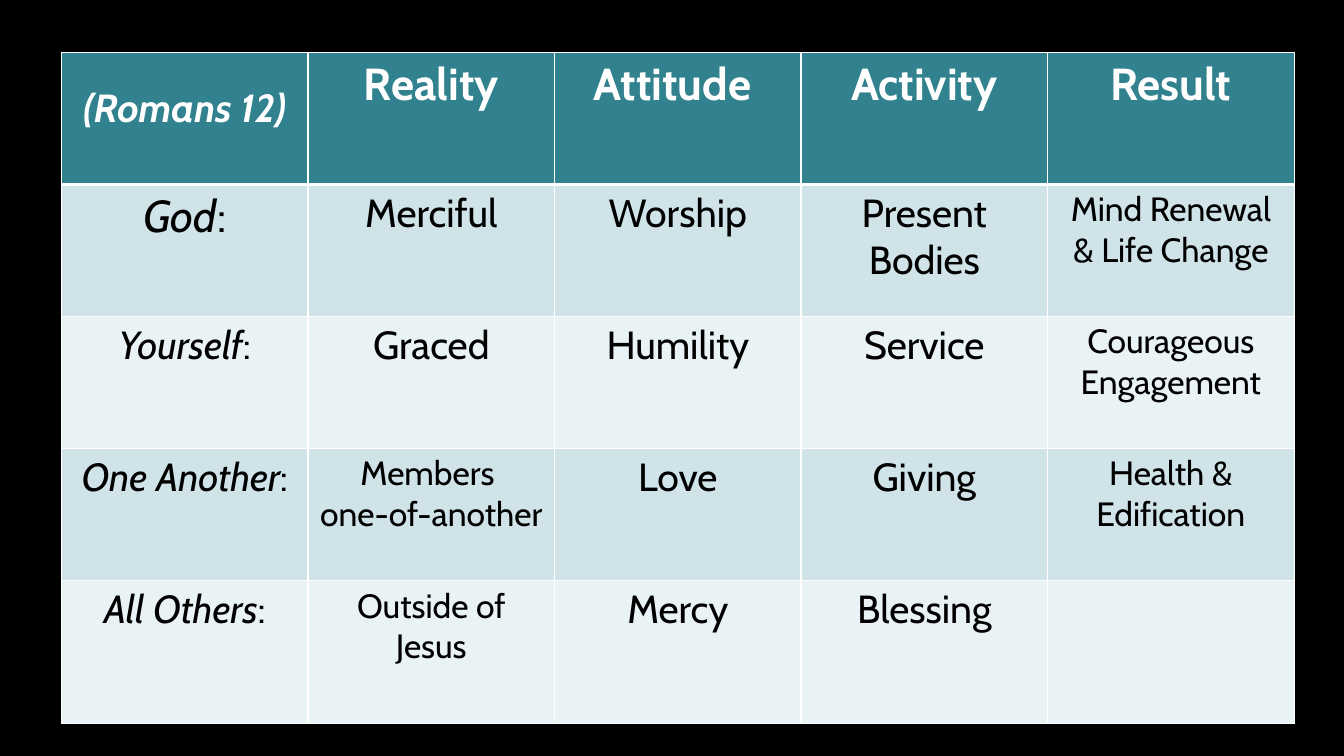
from lxml.etree import SubElement
from pptx import Presentation
from pptx.dml.color import RGBColor
from pptx.enum.text import PP_ALIGN
from pptx.oxml.ns import qn
from pptx.util import Inches, Pt

COLORS = {"black": "000000", "white": "FFFFFF", "header": "31828E",
          "odd": "CFE3E8", "even": "E9F2F4"}
COLUMN_WIDTH = 2.446
ROW_HEIGHTS = [1.31, 1.31, 1.31, 1.31, 1.42]
TEXTS = [
    ["(Romans 12)", "Reality", "Attitude ", "Activity", "Result"],
    ["God:", "Merciful", "Worship", "Present Bodies", "Mind Renewal & Life Change"],
    ["Yourself:", "Graced", "Humility", "Service", "Courageous Engagement"],
    ["One Another:", "Members \none-of-another", "Love", "Giving", "Health & Edification"],
    ["All Others:", "Outside of Jesus", "Mercy", "Blessing", ""],
]
SIZES = [
    [28, 32, 32, 32, 32],
    [32, 28, 28, 28, 24],
    [28, 28, 28, 28, 24],
    [28, 24, 28, 28, 24],
    [28, 24, 28, 28, 24],
]


def add_border(cell, side, points):
    line = SubElement(cell._tc.get_or_add_tcPr(), qn(f"a:ln{side}"), w=str(Pt(points)))
    fill = SubElement(line, qn("a:solidFill"))
    SubElement(fill, qn("a:srgbClr"), val=COLORS["white"])


deck = Presentation()
deck.slide_width, deck.slide_height = Inches(13.333), Inches(7.5)
page = deck.slides.add_slide(deck.slide_layouts[6])
page.background.fill.solid()
page.background.fill.fore_color.rgb = RGBColor.from_string(COLORS["black"])

table = page.shapes.add_table(
    len(TEXTS), len(TEXTS[0]), Inches(0.61), Inches(0.52),
    Inches(COLUMN_WIDTH * len(TEXTS[0])), Inches(sum(ROW_HEIGHTS))).table
for column in table.columns:
    column.width = Inches(COLUMN_WIDTH)
for row, height in zip(table.rows, ROW_HEIGHTS):
    row.height = Inches(height)

for row_index, (texts, sizes) in enumerate(zip(TEXTS, SIZES)):
    is_header = row_index == 0
    band = "header" if is_header else "odd" if row_index % 2 else "even"
    for column_index, (text, size) in enumerate(zip(texts, sizes)):
        cell = table.cell(row_index, column_index)
        for side in "LRTB":
            thick = (row_index, side) in [(0, "B"), (1, "T")]
            add_border(cell, side, 3 if thick else 1)
        cell.fill.solid()
        cell.fill.fore_color.rgb = RGBColor.from_string(COLORS[band])
        cell.text_frame.text = text
        for para in cell.text_frame.paragraphs:
            para.alignment = PP_ALIGN.CENTER
            para.font.name = "Cabin"
            para.font.size = Pt(size)
            para.font.bold = is_header
            para.font.color.rgb = RGBColor.from_string(
                COLORS["white" if is_header else "black"])
        if column_index == 0 and not is_header:
            label = cell.text_frame.paragraphs[0]
            label.runs[0].text = text.removesuffix(":")
            label.runs[0].font.italic = True
            label.add_run().text = ":"

reference = table.cell(0, 0)
reference.margin_top = Inches(0.32)
reference.text_frame.paragraphs[0].font.italic = True

deck.save("out.pptx")
